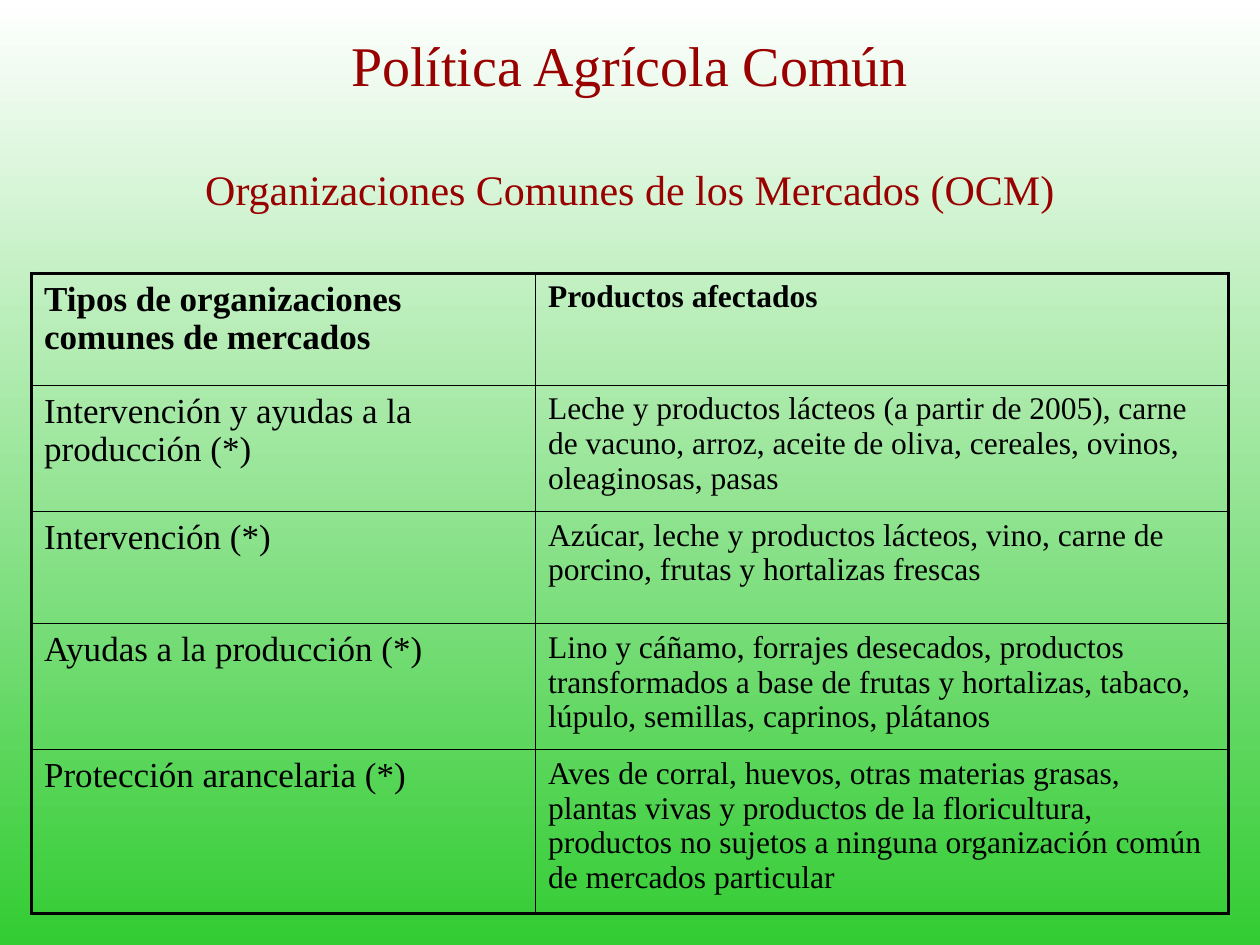
from lxml import etree
from pptx import Presentation
from pptx.dml.color import RGBColor
from pptx.enum.text import MSO_ANCHOR, PP_ALIGN
from pptx.oxml.ns import qn
from pptx.util import Inches, Pt

WHITE = RGBColor(0xFF, 0xFF, 0xFF)
GREEN = RGBColor(0x33, 0xCC, 0x33)
DARK_RED = RGBColor(0x99, 0x00, 0x00)
BLACK = RGBColor(0x00, 0x00, 0x00)
FONT = "Times New Roman"
THICK, THIN = Pt(2.25), Pt(1)


def add_text(paragraph, text, size, color, bold=False, percent_before=0):
    """Add one run; space before is a percentage of the line."""
    if percent_before:
        space_before = etree.SubElement(paragraph._p.get_or_add_pPr(), qn("a:spcBef"))
        etree.SubElement(space_before, qn("a:spcPct"), val=str(percent_before * 1000))
    run = paragraph.add_run()
    run.text = text
    run.font.name = FONT
    run.font.size = Pt(size)
    run.font.bold = bold
    run.font.color.rgb = color


def set_borders(cell, widths):
    """Draw black borders, widths in the order left, right, top, bottom."""
    properties = cell._tc.get_or_add_tcPr()
    for index, (tag, width) in enumerate(zip(("lnL", "lnR", "lnT", "lnB"), widths)):
        line = etree.Element(qn(f"a:{tag}"), w=str(width))
        fill = etree.SubElement(line, qn("a:solidFill"))
        etree.SubElement(fill, qn("a:srgbClr"), val=str(BLACK))
        properties.insert(index, line)


presentation = Presentation()
presentation.slide_width = Inches(10)
presentation.slide_height = Inches(7.5)
slide = presentation.slides.add_slide(presentation.slide_layouts[6])

background = slide.background.fill
background.gradient()
background.gradient_angle = 270
for stop, color, position in zip(background.gradient_stops, (WHITE, GREEN), (0, 1)):
    stop.color.rgb = color
    stop.position = position

headings = [
    ("Política Agrícola Común", 32, (0.75, 0.17, 8.5, 0.67), MSO_ANCHOR.MIDDLE, 0),
    ("Organizaciones Comunes de los Mercados (OCM)", 24, (1.25, 1.25, 7.5, 0.5),
     MSO_ANCHOR.TOP, 50),
]
for text, size, box, anchor, percent_before in headings:
    frame = slide.shapes.add_textbox(*map(Inches, box)).text_frame
    frame.word_wrap = True
    frame.vertical_anchor = anchor
    paragraph = frame.paragraphs[0]
    paragraph.alignment = PP_ALIGN.CENTER
    add_text(paragraph, text, size, DARK_RED, percent_before=percent_before)

market_rows = [
    ("Tipos de organizaciones comunes de mercados", "Productos afectados"),
    ("Intervención y ayudas a la producción (*)",
     "Leche y productos lácteos (a partir de 2005), carne de vacuno, arroz, "
     "aceite de oliva, cereales, ovinos, oleaginosas, pasas"),
    ("Intervención (*)",
     "Azúcar, leche y productos lácteos, vino, carne de porcino, frutas y "
     "hortalizas frescas"),
    ("Ayudas a la producción (*)",
     "Lino y cáñamo, forrajes desecados, productos transformados a base de "
     "frutas y hortalizas, tabaco, lúpulo, semillas, caprinos, plátanos"),
    ("Protección arancelaria (*)",
     "Aves de corral, huevos, otras materias grasas, plantas vivas y productos "
     "de la floricultura, productos no sujetos a ninguna organización común de "
     "mercados particular"),
]
row_heights = (0.89, 1, 0.89, 1, 1.3)
column_widths = (4, 5.5)
column_sizes = (20, 18)

table = slide.shapes.add_table(
    len(market_rows), len(column_widths),
    Inches(0.25), Inches(2.17), Inches(sum(column_widths)), Inches(sum(row_heights)),
).table
table.first_row = False
table.horz_banding = False
for column, width in zip(table.columns, column_widths):
    column.width = Inches(width)

last_row = len(market_rows) - 1
for row_index, (texts, height) in enumerate(zip(market_rows, row_heights)):
    table.rows[row_index].height = Inches(height)
    for column_index, (text, size) in enumerate(zip(texts, column_sizes)):
        cell = table.cell(row_index, column_index)
        cell.fill.background()
        add_text(cell.text_frame.paragraphs[0], text, size, BLACK,
                 bold=row_index == 0, percent_before=20)
        outer_edges = (column_index == 0, column_index == 1,
                       row_index == 0, row_index == last_row)
        set_borders(cell, [THICK if outer else THIN for outer in outer_edges])

presentation.save("out.pptx")
